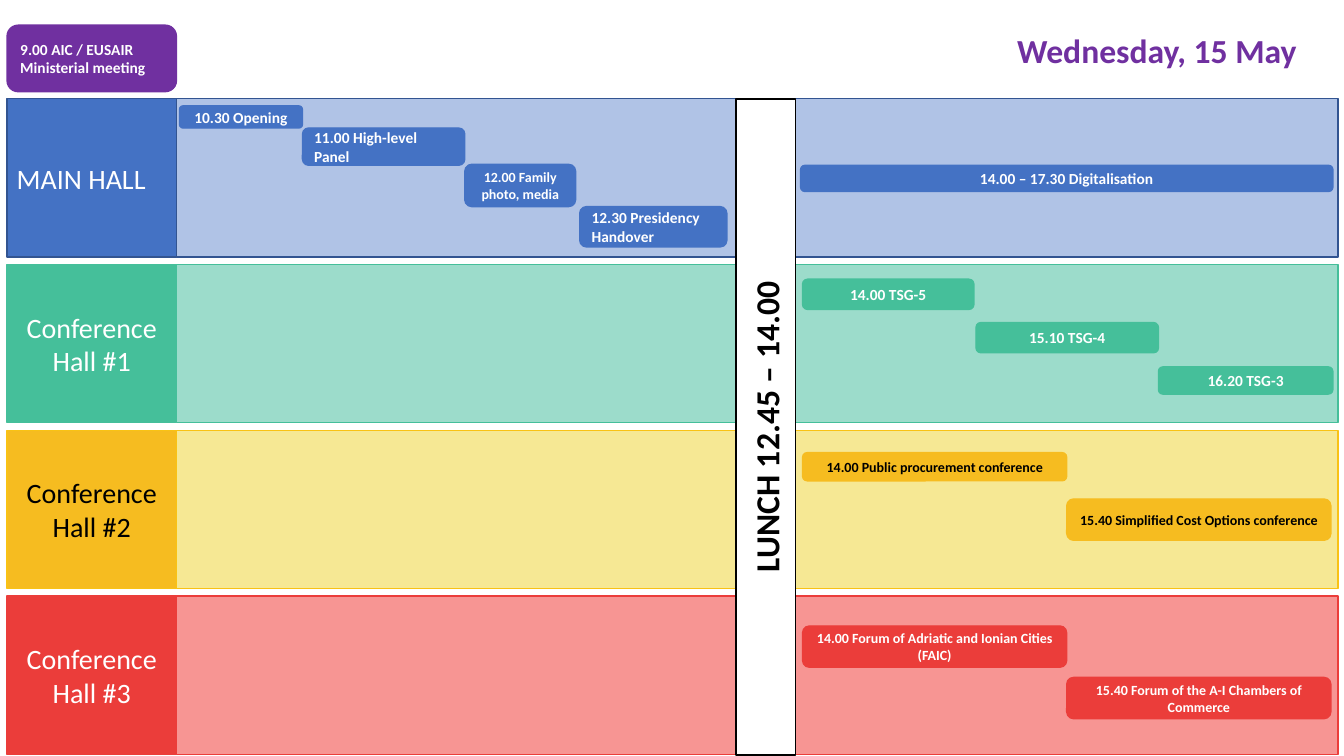
from dataclasses import dataclass

from pptx import Presentation
from pptx.dml.color import RGBColor
from pptx.enum.shapes import MSO_SHAPE
from pptx.enum.text import MSO_ANCHOR, MSO_AUTO_SIZE, PP_ALIGN
from pptx.shapes.autoshape import Shape
from pptx.slide import Slide
from pptx.util import Inches, Pt

RECTANGLE = MSO_SHAPE.RECTANGLE
ROUNDED = MSO_SHAPE.FLOWCHART_ALTERNATE_PROCESS
LEFT, CENTER, RIGHT = PP_ALIGN.LEFT, PP_ALIGN.CENTER, PP_ALIGN.RIGHT
MIDDLE = MSO_ANCHOR.MIDDLE
FIT_SHAPE = MSO_AUTO_SIZE.SHAPE_TO_FIT_TEXT

WHITE = RGBColor(0xFF, 0xFF, 0xFF)
BLACK = RGBColor(0x00, 0x00, 0x00)
PURPLE = RGBColor(0x70, 0x30, 0xA0)
BLUE = RGBColor(0x44, 0x72, 0xC4)
DARK_BLUE = RGBColor(0x32, 0x54, 0x91)
PALE_BLUE = RGBColor(0xB0, 0xC3, 0xE6)
GREEN = RGBColor(0x45, 0xBF, 0x9A)
PALE_GREEN = RGBColor(0x9C, 0xDC, 0xCB)
AMBER = RGBColor(0xF6, 0xBC, 0x20)
YELLOW = RGBColor(0xF9, 0xC2, 0x14)
PALE_YELLOW = RGBColor(0xF6, 0xE8, 0x94)
RED = RGBColor(0xEB, 0x3D, 0x3A)
PALE_RED = RGBColor(0xF7, 0x95, 0x93)

FONT = "Calibri"
HALL_LEFT, HALL_WIDTH = 0.07, 1.68
LANE_LEFT, LANE_WIDTH = HALL_LEFT + HALL_WIDTH, 11.52
LANE_TOP, LANE_HEIGHT, LANE_PITCH = 0.98, 1.57, 1.645


@dataclass(frozen=True)
class Box:
    left: float
    top: float
    width: float
    height: float


@dataclass(frozen=True)
class Session:
    title: str
    box: Box
    size: int = 11
    align: PP_ALIGN = CENTER


@dataclass(frozen=True)
class Hall:
    name: str
    color: RGBColor
    lane_color: RGBColor
    border: RGBColor
    text_color: RGBColor
    sessions: tuple[Session, ...]
    margin_left: float = 0.1
    margin_right: float = 0.1


HALLS = (
    Hall("MAIN HALL", BLUE, PALE_BLUE, DARK_BLUE, WHITE, (
        Session("10.30 Opening", Box(1.78, 1.05, 1.22, 0.22)),
        Session("11.00 High-level Panel", Box(3, 1.27, 1.61, 0.37), align=LEFT),
        Session("12.00 Family photo, media", Box(4.61, 1.63, 1.1, 0.42), 10),
        Session("12.30 Presidency Handover", Box(5.75, 2.05, 1.46, 0.4), align=LEFT),
        Session("14.00 – 17.30 Digitalisation", Box(7.94, 1.64, 5.28, 0.26)),
    ), margin_left=0.05, margin_right=0.26),
    Hall("Conference Hall #1", GREEN, PALE_GREEN, GREEN, WHITE, (
        Session("14.00 TSG-5", Box(7.96, 2.77, 1.7, 0.3)),
        Session("15.10 TSG-4", Box(9.68, 3.2, 1.81, 0.3)),
        Session("16.20 TSG-3", Box(11.49, 3.64, 1.73, 0.27)),
    )),
    Hall("Conference Hall #2", AMBER, PALE_YELLOW, YELLOW, BLACK, (
        Session("14.00 Public procurement conference", Box(7.96, 4.49, 2.62, 0.28), 10),
        Session("15.40 Simplified Cost Options conference", Box(10.58, 4.95, 2.62, 0.41), 10),
    )),
    Hall("Conference Hall #3", RED, PALE_RED, RED, WHITE, (
        Session("14.00 Forum of Adriatic and Ionian Cities (FAIC)", Box(7.96, 6.21, 2.62, 0.41), 10),
        Session("15.40 Forum of the A-I Chambers of Commerce", Box(10.58, 6.72, 2.62, 0.41), 10),
    )),
)
MINISTERIAL = Session("9.00 AIC / EUSAIR Ministerial meeting",
                      Box(HALL_LEFT, 0.25, HALL_WIDTH, 0.66), align=LEFT)


def write(shape: Shape, text: str, size: int, color: RGBColor,
          align: PP_ALIGN = CENTER, bold: bool = True) -> None:
    frame = shape.text_frame
    frame.word_wrap = True
    paragraph = frame.paragraphs[0]
    paragraph.alignment = align
    run = paragraph.add_run()
    run.text = text
    run.font.name = FONT
    run.font.size = Pt(size)
    run.font.bold = bold
    run.font.color.rgb = color


def draw_block(slide: Slide, box: Box, fill: RGBColor, border: RGBColor,
               preset: MSO_SHAPE = RECTANGLE) -> Shape:
    block = slide.shapes.add_shape(preset, Inches(box.left), Inches(box.top),
                                   Inches(box.width), Inches(box.height))
    block.shadow.inherit = False
    block.fill.solid()
    block.fill.fore_color.rgb = fill
    block.line.color.rgb = border
    block.line.width = Pt(1)
    block.text_frame.vertical_anchor = MIDDLE
    return block


def draw_session(slide: Slide, session: Session, fill: RGBColor, color: RGBColor) -> None:
    block = draw_block(slide, session.box, fill, fill, ROUNDED)
    write(block, session.title, session.size, color, session.align)


def draw_hall(slide: Slide, hall: Hall, top: float) -> None:
    label = draw_block(slide, Box(HALL_LEFT, top, HALL_WIDTH, LANE_HEIGHT), hall.color, hall.border)
    label.text_frame.margin_left = Inches(hall.margin_left)
    label.text_frame.margin_right = Inches(hall.margin_right)
    write(label, hall.name, 20, hall.text_color, bold=False)
    draw_block(slide, Box(LANE_LEFT, top, LANE_WIDTH, LANE_HEIGHT), hall.lane_color, hall.border)
    for session in hall.sessions:
        draw_session(slide, session, hall.color, hall.text_color)


def draw_lunch(slide: Slide) -> None:
    lunch = draw_block(slide, Box(4.34, 3.94, 6.51, 0.59), WHITE, BLACK)
    lunch.rotation = 270
    write(lunch, "LUNCH 12.45 – 14.00", 24, BLACK)


def draw_date(slide: Slide) -> None:
    date = slide.shapes.add_textbox(Inches(9.66), Inches(0.25), Inches(3.3), Inches(0.5))
    date.text_frame.auto_size = FIT_SHAPE
    write(date, "Wednesday, 15 May", 24, PURPLE, RIGHT)


def main() -> None:
    presentation = Presentation()
    presentation.slide_width = Inches(13.33)
    presentation.slide_height = Inches(7.5)
    slide = presentation.slides.add_slide(presentation.slide_layouts[6])
    for row, hall in enumerate(HALLS):
        draw_hall(slide, hall, LANE_TOP + row * LANE_PITCH)
    draw_lunch(slide)
    draw_session(slide, MINISTERIAL, PURPLE, WHITE)
    draw_date(slide)
    presentation.save("out.pptx")


if __name__ == "__main__":
    main()
